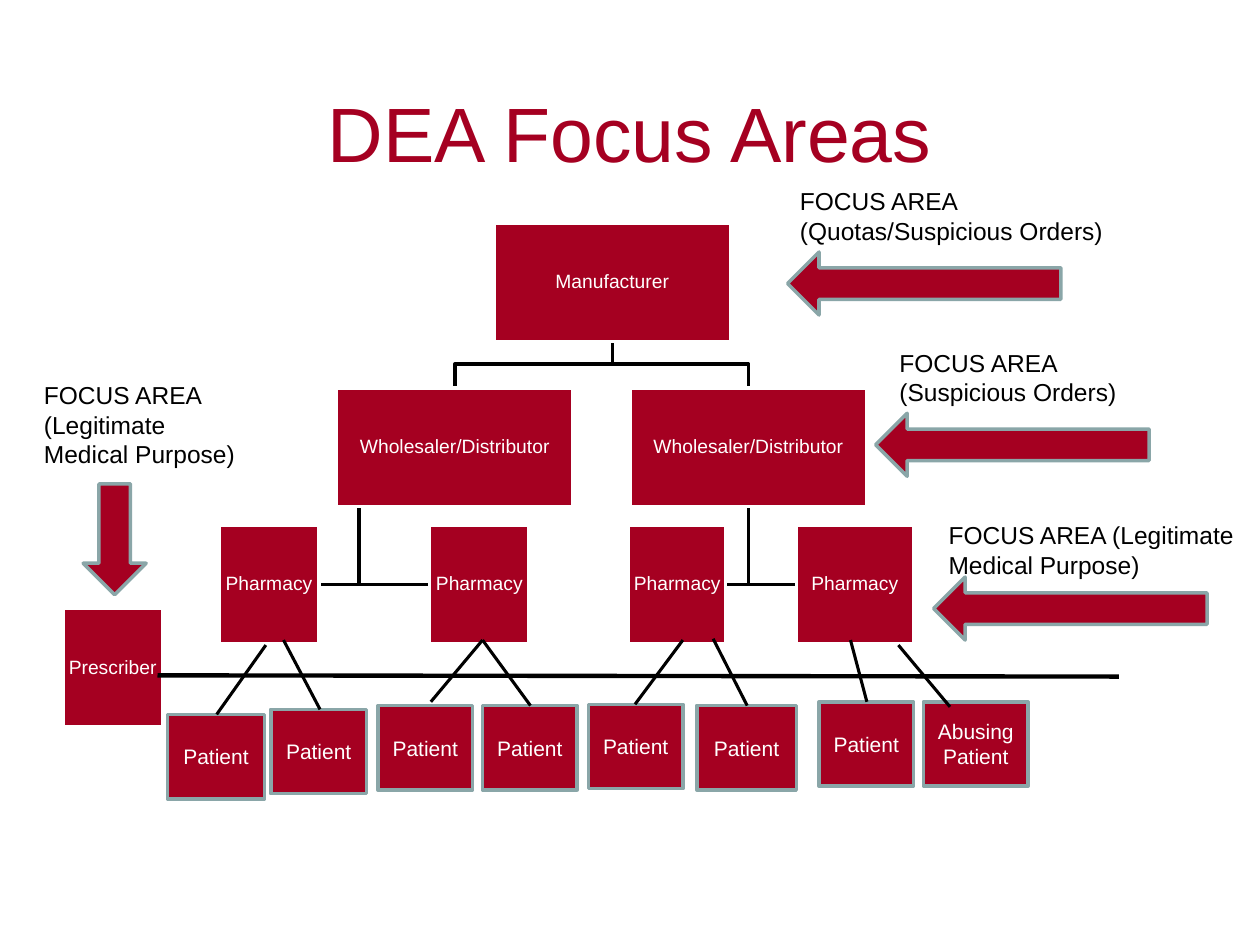
from lxml import etree
from pptx import Presentation
from pptx.dml.color import RGBColor
from pptx.enum.shapes import MSO_CONNECTOR, MSO_SHAPE
from pptx.enum.text import MSO_ANCHOR, PP_ALIGN
from pptx.oxml.ns import qn
from pptx.util import Inches, Pt

RECTANGLE, ARROW = MSO_SHAPE.RECTANGLE, MSO_SHAPE.RIGHT_ARROW
STRAIGHT = MSO_CONNECTOR.STRAIGHT
MIDDLE, TOP = MSO_ANCHOR.MIDDLE, MSO_ANCHOR.TOP
CENTER, LEFT = PP_ALIGN.CENTER, PP_ALIGN.LEFT

COLORS = {"red": "A50021", "gray": "8AA6A8", "white": "FFFFFF", "black": "000000"}
MARGINS = ("margin_left", "margin_right", "margin_top", "margin_bottom")
TIER_HEIGHT, PATIENT_HEIGHT = 0.94, 0.67

# Left, top, width of the chart boxes
TIERS = [
    ("Manufacturer", 3.92, 1.77, 1.88),
    ("Wholesaler/Distributor", 2.67, 3.08, 1.88),
    ("Wholesaler/Distributor", 5, 3.08, 1.88),
    ("Pharmacy", 1.74, 4.17, 0.79),
    ("Pharmacy", 3.41, 4.17, 0.79),
    ("Pharmacy", 4.99, 4.17, 0.77),
    ("Pharmacy", 6.32, 4.17, 0.93),
    ("Prescriber", 0.5, 4.83, 0.79),
]
PATIENTS = [
    ("Patient", 1.33, 5.67, 0.77),
    ("Patient", 2.15, 5.63, 0.76),
    ("Patient", 3, 5.6, 0.75),
    ("Patient", 3.83, 5.6, 0.75),
    ("Patient", 4.67, 5.59, 0.75),
    ("Patient", 5.53, 5.6, 0.79),
    ("Patient", 6.5, 5.57, 0.75),
    ("Abusing Patient", 7.33, 5.57, 0.83),
]
# Start and end of each pharmacy-to-patient line
PATIENT_LINES = [
    (2.11, 5.12, 1.72, 5.67), (2.25, 5.08, 2.54, 5.63),
    (3.83, 5.08, 3.42, 5.57), (3.83, 5.08, 4.21, 5.6),
    (5.42, 5.08, 5.04, 5.59), (5.66, 5.07, 5.93, 5.6),
    (6.75, 5.08, 6.88, 5.57), (7.13, 5.12, 7.54, 5.61),
]
PRESCRIBER_LINE = (1.25, 5.36, 8.88, 5.37)
# Label lines, label box, arrow box, arrow rotation
FOCUS_AREAS = [
    (["FOCUS AREA (Quotas/Suspicious Orders)"],
     (6.25, 1.43, 2.92, 0.57), (6.25, 2, 2.17, 0.5), 180),
    (["FOCUS AREA", "(Suspicious Orders)"],
     (7.04, 2.71, 2.92, 0.57), (6.95, 3.28, 2.17, 0.5), 180),
    (["FOCUS AREA (Legitimate Medical Purpose)"],
     (7.43, 4.08, 2.92, 0.57), (7.41, 4.58, 2.17, 0.5), 180),
    (["FOCUS AREA", "(Legitimate Medical Purpose)"],
     (0.25, 2.97, 1.75, 0.81), (0.47, 4.03, 0.88, 0.5), 90),
]


def color(name):
    return RGBColor.from_string(COLORS[name])


def inches(values):
    return [Inches(value) for value in values]


def write(frame, lines, size, ink, align=CENTER, anchor=MIDDLE, spacing=None):
    frame.word_wrap = True
    frame.vertical_anchor = anchor
    for index, line in enumerate(lines):
        para = frame.paragraphs[0] if index == 0 else frame.add_paragraph()
        para.alignment = align
        para.line_spacing = spacing
        span = para.add_run()
        span.text = line
        for name, value in {"name": "Arial", "size": Pt(size)}.items():
            setattr(span.font, name, value)
        span.font.color.rgb = color(ink)


def add_title(page, text):
    title = page.shapes.title
    places = zip(("left", "top", "width", "height"), (0.5, 0.42, 9, 1.25))
    for name, value in places:
        setattr(title, name, Inches(value))
    write(title.text_frame, [text], 44, "red")


def add_red_shape(page, kind, place, outline):
    shape = page.shapes.add_shape(kind, *inches(place))
    shape.shadow.inherit = False
    shape.fill.solid()
    shape.fill.fore_color.rgb = color("red")
    shape.line.color.rgb = color(outline)
    shape.line.width = Pt(2)
    return shape


def add_tier_box(page, text, left, top, width):
    box = add_red_shape(page, RECTANGLE, (left, top, width, TIER_HEIGHT), "white")
    for margin in MARGINS:
        setattr(box.text_frame, margin, Inches(0.01))
    write(box.text_frame, [text], 11, "white", spacing=0.9)


def add_patient_box(page, text, left, top, width):
    box = add_red_shape(page, RECTANGLE, (left, top, width, PATIENT_HEIGHT), "gray")
    write(box.text_frame, [text], 12, "white")


def add_branch(page, points):
    """Draw an open elbow line through the points."""
    start, *rest = [inches(point) for point in points]
    builder = page.shapes.build_freeform(*start)
    builder.add_line_segments(rest, close=False)
    branch = builder.convert_to_shape()
    branch.shadow.inherit = False
    branch.fill.background()
    branch.line.color.rgb = color("black")
    branch.line.width = Pt(2)


def add_tier_branches(page):
    trunk, bottom, bar, top = 4.86, 2.71, 2.89, 3.08
    for end in (3.61, 5.94):
        add_branch(page, [(trunk, bottom), (trunk, bar), (end, bar), (end, top)])
    for trunk, ends in ((2.85, (2.52, 3.41)), (5.94, (5.75, 6.32))):
        for end in ends:
            add_branch(page, [(trunk, 4.02), (trunk, 4.64), (end, 4.64)])


def add_line(page, ends, width):
    line = page.shapes.add_connector(STRAIGHT, *inches(ends))
    line.line.color.rgb = color("black")
    line.line.width = Pt(width)
    etree.SubElement(line._element.spPr, qn("a:effectLst"))


def add_focus_area(page, lines, label_place, arrow_place, rotation):
    arrow = add_red_shape(page, ARROW, arrow_place, "gray")
    arrow.rotation = rotation
    label = page.shapes.add_textbox(*inches(label_place))
    write(label.text_frame, lines, 14, "black", align=LEFT, anchor=TOP)


def main():
    deck = Presentation()
    deck.slide_width, deck.slide_height = Inches(10), Inches(7.5)
    page = deck.slides.add_slide(deck.slide_layouts.get_by_name("Title Only"))
    add_title(page, "DEA Focus Areas")
    add_tier_branches(page)
    for tier in TIERS:
        add_tier_box(page, *tier)
    for area in FOCUS_AREAS:
        add_focus_area(page, *area)
    for patient in PATIENTS:
        add_patient_box(page, *patient)
    for ends in PATIENT_LINES:
        add_line(page, ends, 1.75)
    add_line(page, PRESCRIBER_LINE, 2.5)
    deck.save("out.pptx")


if __name__ == "__main__":
    main()
